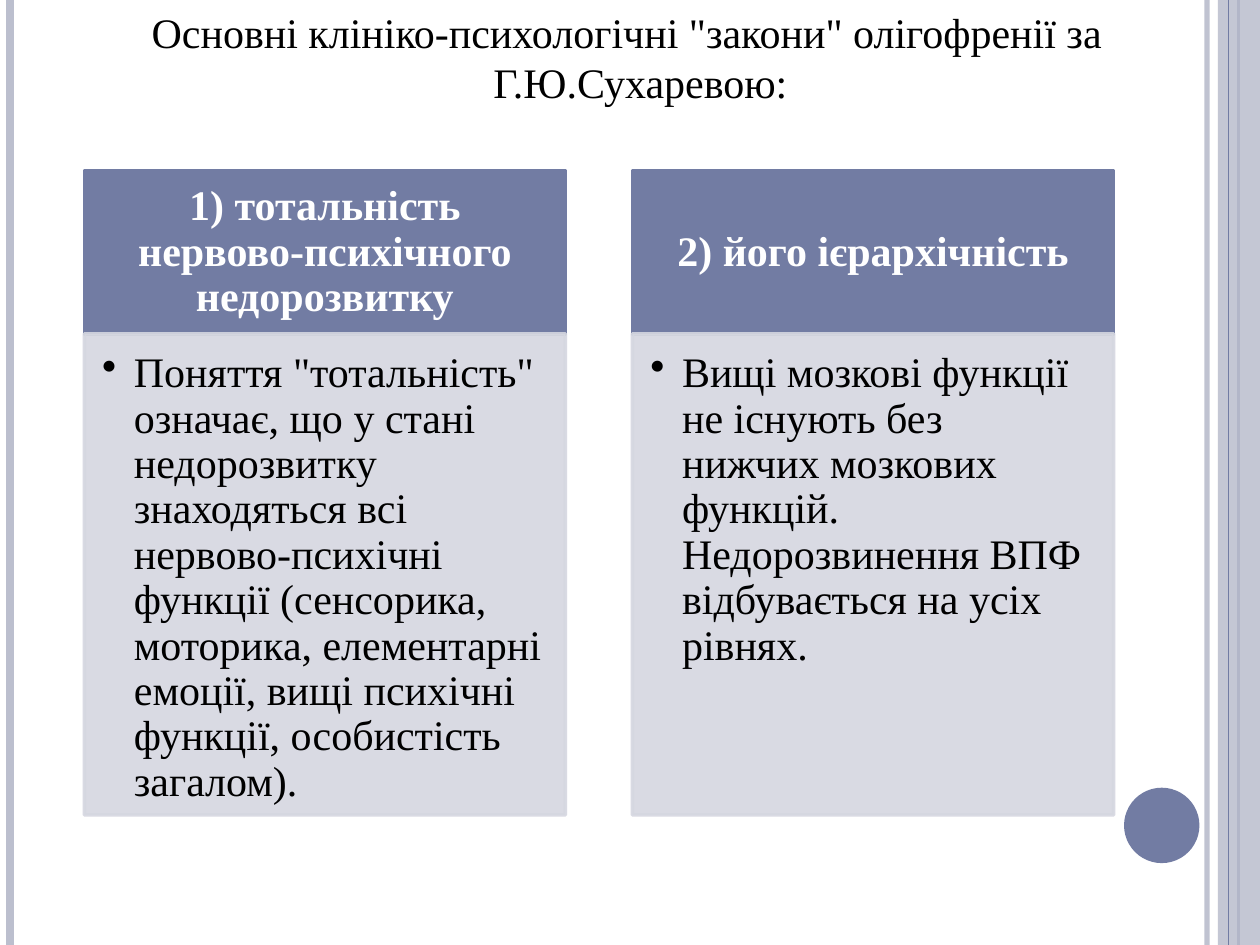
import pptx
import pptx.dml.color
import pptx.enum.shapes
import pptx.enum.text
import pptx.oxml
import pptx.oxml.ns
import pptx.util

Cm = pptx.util.Cm
Pt = pptx.util.Pt
RGBColor = pptx.dml.color.RGBColor
Align = pptx.enum.text.PP_ALIGN
Anchor = pptx.enum.text.MSO_ANCHOR
Shape = pptx.enum.shapes.MSO_SHAPE

SLATE = RGBColor(0x72, 0x7C, 0xA3)
MIST = RGBColor(0xBC, 0xBF, 0xCE)
PALE = RGBColor(0xD5, 0xD7, 0xE0)
BLACK = RGBColor(0, 0, 0)
WHITE = RGBColor(0xFF, 0xFF, 0xFF)

SLIDE_WIDTH, SLIDE_HEIGHT = Cm(25.4), Cm(19.05)
HEADER_HEIGHT = Cm(3.28)

TITLE = 'Основні клініко-психологічні "закони" олігофренії за Г.Ю.Сухаревою: '
LAWS = [
    ("1) тотальність нервово-психічного недорозвитку",
     'Поняття "тотальність" означає, що у стані недорозвитку знаходяться всі '
     "нервово-психічні функції (сенсорика, моторика, елементарні емоції, вищі "
     "психічні функції, особистість загалом)."),
    ("2) його ієрархічність",
     "Вищі мозкові функції не існують без нижчих мозкових функцій. "
     "Недорозвинення ВПФ відбувається на усіх рівнях."),
]

FONT = {"name": "Times New Roman", "size": Pt(24), "bold": False}
TITLE_FRAME = {"word_wrap": True, "vertical_anchor": Anchor.TOP,
               "auto_size": pptx.enum.text.MSO_AUTO_SIZE.NONE}
HEADER_FRAME = {"word_wrap": True, "vertical_anchor": Anchor.MIDDLE,
                "margin_left": Cm(0.48), "margin_right": Cm(0.48),
                "margin_top": Cm(0.28), "margin_bottom": Cm(0.28)}
BODY_FRAME = {"word_wrap": True, "vertical_anchor": Anchor.TOP,
              "margin_left": Cm(0.36), "margin_right": Cm(0.48),
              "margin_top": Cm(0.36), "margin_bottom": Cm(0.53)}


def apply(target, values):
    for name, value in values.items():
        setattr(target, name, value)


def set_opacity(fill_parent, percent):
    for color in fill_parent.iter(pptx.oxml.ns.qn("a:srgbClr")):
        alpha = pptx.oxml.parse_xml(
            f'<a:alpha {pptx.oxml.ns.nsdecls("a")} val="{percent * 1000}"/>')
        color.append(alpha)


def set_indent(paragraph, left, first, bullet=None):
    properties = paragraph._p.get_or_add_pPr()
    properties.set("marL", str(left))
    properties.set("indent", str(first))
    if bullet:
        properties.append(pptx.oxml.parse_xml(
            f'<a:buChar {pptx.oxml.ns.nsdecls("a")} char="{bullet}"/>'))


def write(shape, text, frame, paragraph_format, font):
    apply(shape.text_frame, frame)
    paragraph = shape.text_frame.paragraphs[0]
    apply(paragraph, paragraph_format)
    run = paragraph.add_run()
    run.text = text
    color = font.pop("color")
    apply(run.font, font)
    run.font.color.rgb = color
    return paragraph


def add_block(slide, kind, box, color, line_width=0, opacity=100):
    shape = slide.shapes.add_shape(kind, *box)
    shape.shadow.inherit = False
    shape.fill.solid()
    shape.fill.fore_color.rgb = color
    if line_width:
        shape.line.color.rgb = color
        shape.line.width = Pt(line_width)
    else:
        shape.line.fill.background()
    if opacity < 100:
        set_opacity(shape._element.spPr, opacity)
    return shape


def add_stripe(slide, x, color, width, opacity=100):
    stripe = slide.shapes.add_connector(
        pptx.enum.shapes.MSO_CONNECTOR.STRAIGHT, x, 0, x, SLIDE_HEIGHT)
    stripe.line.color.rgb = color
    stripe.line.width = Pt(width)
    if opacity < 100:
        set_opacity(stripe._element.spPr, opacity)
    stripe._element.spPr.append(pptx.oxml.parse_xml(
        f'<a:effectLst {pptx.oxml.ns.nsdecls("a")}/>'))


def add_decoration(slide):
    add_stripe(slide, Cm(24.33), MIST, 3, 93)
    add_stripe(slide, Cm(0.21), MIST, 4.5)
    add_stripe(slide, Cm(24.97), SLATE, 1.5)
    band_left = Cm(24.55)
    add_block(slide, Shape.RECTANGLE,
              (band_left, 0, SLIDE_WIDTH - band_left, SLIDE_HEIGHT), MIST, opacity=87)
    add_stripe(slide, Cm(24.77), SLATE, 0.75)
    add_block(slide, Shape.OVAL, (Cm(22.66), Cm(15.88), Cm(1.52), Cm(1.52)), SLATE)


def fill_title(title, left, top, width, height):
    apply(title, {"left": left, "top": top, "width": width, "height": height})
    paragraph = write(title, TITLE, TITLE_FRAME,
                      {"alignment": Align.CENTER, "space_before": Pt(6)},
                      {**FONT, "color": BLACK})
    set_indent(paragraph, Cm(0.76), -Cm(0.76))


def add_law(slide, heading, explanation, left, top, width, height):
    header = add_block(slide, Shape.RECTANGLE, (left, top, width, HEADER_HEIGHT), SLATE, 2)
    write(header, heading, HEADER_FRAME,
          {"alignment": Align.CENTER, "line_spacing": 0.9},
          {**FONT, "bold": True, "color": WHITE})
    body = add_block(slide, Shape.RECTANGLE,
                     (left, top + HEADER_HEIGHT, width, height - HEADER_HEIGHT),
                     PALE, 2, 90)
    paragraph = write(body, explanation, BODY_FRAME,
                      {"alignment": Align.LEFT, "line_spacing": 0.9},
                      {**FONT, "color": BLACK})
    set_indent(paragraph, Cm(0.64), -Cm(0.64), "•")


def main():
    presentation = pptx.Presentation()
    apply(presentation, {"slide_width": SLIDE_WIDTH, "slide_height": SLIDE_HEIGHT})
    slide = presentation.slides.add_slide(presentation.slide_layouts.get_by_name("Title Only"))
    add_decoration(slide)
    fill_title(slide.shapes.title, Cm(1.27), Cm(0), Cm(22.73), Cm(2.97))
    for index, (heading, explanation) in enumerate(LAWS):
        add_law(slide, heading, explanation,
                Cm(1.7) + index * Cm(11.05), Cm(3.45), Cm(9.7), Cm(12.98))
    presentation.save("out.pptx")


if __name__ == "__main__":
    main()
